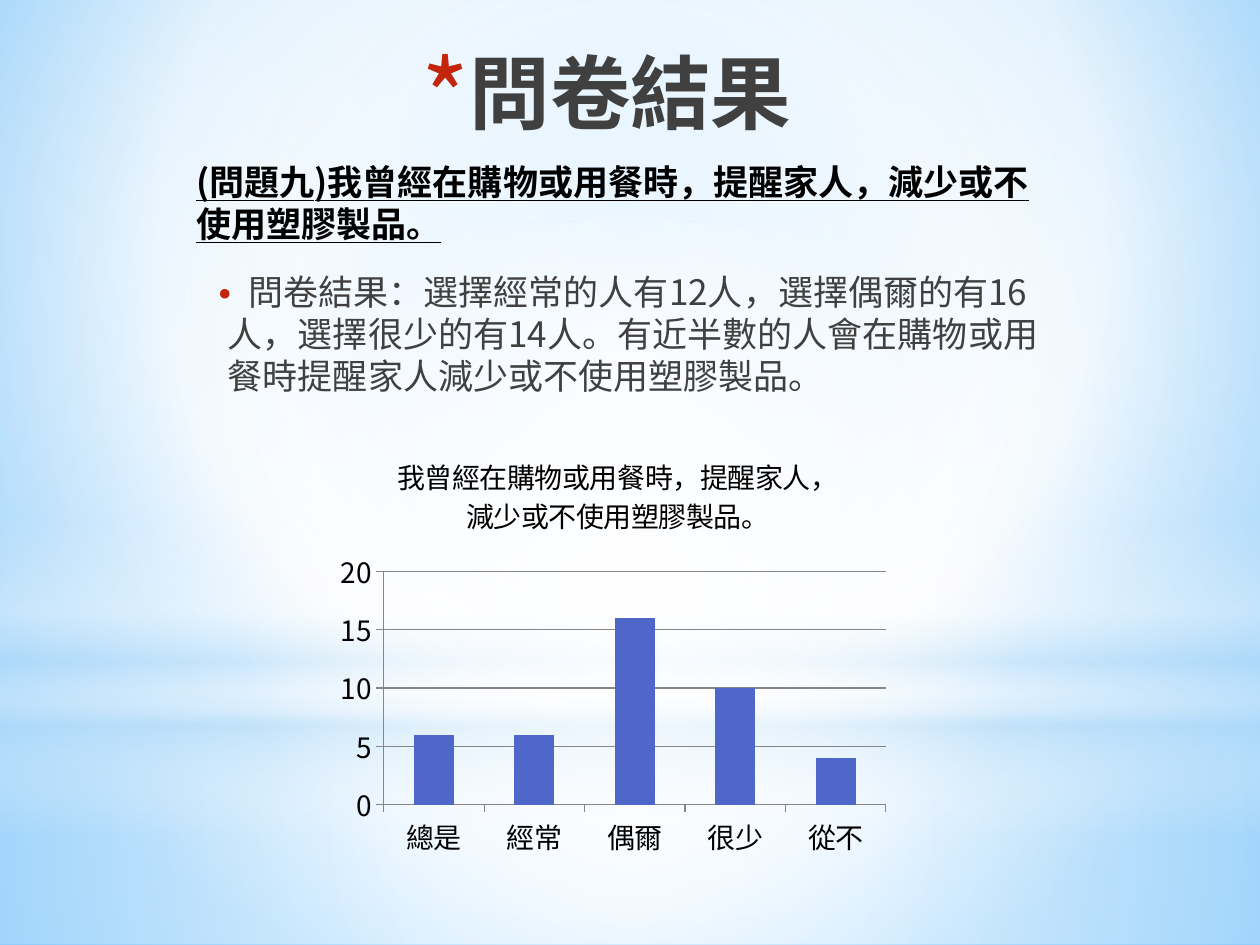
from lxml import etree
from pptx import Presentation
from pptx.chart.data import CategoryChartData
from pptx.dml.color import RGBColor
from pptx.enum import chart as ch, shapes, text
from pptx.oxml import parse_xml
from pptx.oxml.ns import nsdecls, qn
from pptx.util import Pt

FONT = "Noto Sans CJK SC"
QUESTION = "我曾經在購物或用餐時，提醒家人，減少或不使用塑膠製品。"
RESULT = ("問卷結果：選擇經常的人有12人，選擇偶爾的有16人，選擇很少的有14人。"
          "有近半數的人會在購物或用餐時提醒家人減少或不使用塑膠製品。")
COUNTS = {"總是": 6, "經常": 6, "偶爾": 16, "很少": 10, "從不": 4}
CENTER = (50, 50, 50, 50)


def rgb(value):
    return RGBColor.from_string(value)


def set_gradient(holder, stops, focus=None):
    gs = "".join(
        f'<a:gs pos="{pos * 1000}"><a:srgbClr val="{color}">'
        f'<a:alpha val="{alpha * 1000}"/></a:srgbClr></a:gs>'
        for pos, color, alpha in stops)
    shade = '<a:lin ang="5400000" scaled="0"/>'
    if focus:
        l, t, r, b = (edge * 1000 for edge in focus)
        shade = (f'<a:path path="circle"><a:fillToRect l="{l}" t="{t}" '
                 f'r="{r}" b="{b}"/></a:path>')
    grad = parse_xml(f'<a:gradFill {nsdecls("a")} rotWithShape="1">'
                     f'<a:gsLst>{gs}</a:gsLst>{shade}</a:gradFill>')
    solid = holder.find(qn("a:solidFill"))
    holder.replace(solid, grad)


def add_glow(slide, kind, top, height, stops, focus=None):
    sp = slide.shapes.add_shape(kind, 0, Pt(top), Pt(720), Pt(height))
    sp.shadow.inherit = False
    sp.line.fill.background()
    sp.fill.solid()
    set_gradient(sp.element.spPr, stops, focus)


def add_background(slide):
    slide.background.fill.solid()
    set_gradient(slide.element.find(".//" + qn("p:bgPr")),
                 [(0, "9ED5FF", 100), (60, "FFFFFF", 100), (100, "5BB9FF", 100)],
                 (20, 10, 20, 60))
    rect, oval = shapes.MSO_SHAPE.RECTANGLE, shapes.MSO_SHAPE.OVAL
    add_glow(slide, rect, 402, 138,
             [(0, "FFFFFF", 91), (37, "FFFFFF", 76), (100, "B4DCFA", 79)], CENTER)
    add_glow(slide, rect, 0, 402,
             [(0, "FFFFFF", 89), (48, "FFFFFF", 62), (100, "B4DCFA", 79)], CENTER)
    add_glow(slide, rect, 297, 180,
             [(0, "FFFFFF", 0), (29, "FFFFFF", 30), (45, "B4DCFA", 40),
              (55, "FFFFFF", 26), (65, "B4DCFA", 60), (100, "FFFFFF", 0)])
    add_glow(slide, oval, 126, 402, [(0, "FFFFFF", 100), (56, "FFFFFF", 0)], CENTER)


def set_font(font, size, color, bold=False):
    font.size, font.bold, font.name = Pt(size), bold, FONT
    font.color.rgb = rgb(color)


def fill_text(sp, box, words, size, color, bold=False, align=text.PP_ALIGN.LEFT):
    sp.left, sp.top, sp.width, sp.height = map(Pt, box)
    tf = sp.text_frame
    tf.text = words
    tf.word_wrap = True
    tf.auto_size = text.MSO_AUTO_SIZE.NONE
    tf.vertical_anchor = text.MSO_ANCHOR.TOP
    p = tf.paragraphs[0]
    p.alignment = align
    p.line_spacing = Pt(size * 1.2)
    r = p.runs[0]
    set_font(r.font, size, color, bold)
    ea = etree.SubElement(r.font._element, qn("a:ea"))
    ea.set("typeface", FONT)
    return p


def set_bullet(p, char, scale, margin, indent):
    pPr = p._p.get_or_add_pPr()
    pPr.set("marL", str(Pt(margin)))
    pPr.set("indent", str(Pt(indent)))
    color = etree.SubElement(pPr, qn("a:buClr"))
    etree.SubElement(color, qn("a:srgbClr")).set("val", "C3260C")
    etree.SubElement(pPr, qn("a:buSzPct")).set("val", str(scale * 1000))
    etree.SubElement(pPr, qn("a:buFont")).set("typeface", FONT)
    etree.SubElement(pPr, qn("a:buChar")).set("char", char)


def style_axis(axis):
    axis.major_tick_mark = ch.XL_TICK_MARK.OUTSIDE
    axis.minor_tick_mark = ch.XL_TICK_MARK.NONE
    axis.format.line.color.rgb = rgb("868686")
    set_font(axis.tick_labels.font, 16, "000000")


def set_plot_area(chart, x, y, w, h):
    area = chart._chartSpace.chart.plotArea
    for old in area.findall(qn("c:layout")):
        area.remove(old)
    sizes = "".join(f'<c:{k} val="{v}"/>' for k, v in zip("xywh", (x, y, w, h)))
    area.insert(0, parse_xml(
        f'<c:layout {nsdecls("c")}><c:manualLayout><c:layoutTarget val="inner"/>'
        f'<c:xMode val="edge"/><c:yMode val="edge"/>{sizes}'
        '</c:manualLayout></c:layout>'))


def add_count_chart(slide):
    data = CategoryChartData()
    data.categories = list(COUNTS)
    data.add_series(QUESTION, list(COUNTS.values()))
    chart = slide.shapes.add_chart(
        ch.XL_CHART_TYPE.COLUMN_CLUSTERED,
        Pt(190), Pt(247.5), Pt(326), Pt(247), data).chart
    chart.font.name, chart.font.size = "Cabin", Pt(10)
    chart.has_legend = False
    chart.has_title = True
    tf = chart.chart_title.text_frame
    tf.text = QUESTION
    set_font(tf.paragraphs[0].runs[0].font, 16, "000000")
    chart.chart_title.include_in_layout = False
    plot = chart.plots[0]
    plot.gap_width = 150
    plot.vary_by_categories = False
    bars = plot.series[0].format.fill
    bars.solid()
    bars.fore_color.rgb = rgb("4E67C8")
    style_axis(chart.category_axis)
    axis = chart.value_axis
    style_axis(axis)
    axis.minimum_scale, axis.maximum_scale, axis.major_unit = 0, 20, 5
    axis.has_major_gridlines = True
    axis.major_gridlines.format.line.color.rgb = rgb("868686")
    set_plot_area(chart, 0.09, 0.32, 0.88, 0.54)


def main():
    prs = Presentation()
    prs.slide_width, prs.slide_height = Pt(720), Pt(540)
    slide = prs.slides.add_slide(prs.slide_layouts[1])
    title, body = slide.placeholders
    add_background(slide)
    for sp in (title, body):
        slide.shapes.element.append(sp.element)

    p = fill_text(title, (111, 21, 471, 90), "問卷結果", 46, "404040", True,
                  text.PP_ALIGN.CENTER)
    set_bullet(p, "*", 128, 25.2, -25.2)
    p = fill_text(body, (105, 151, 504, 113), RESULT, 20, "404040")
    p.space_before, p.space_after = Pt(4), Pt(3)
    set_bullet(p, "•", 130, 18, -14.4)
    question = slide.shapes.add_textbox(0, 0, 0, 0)
    p = fill_text(question, (105, 88, 499, 55.5), "(問題九)" + QUESTION, 20, "000000", True)
    p.runs[0].font.underline = True
    add_count_chart(slide)
    prs.save("out.pptx")


if __name__ == "__main__":
    main()
